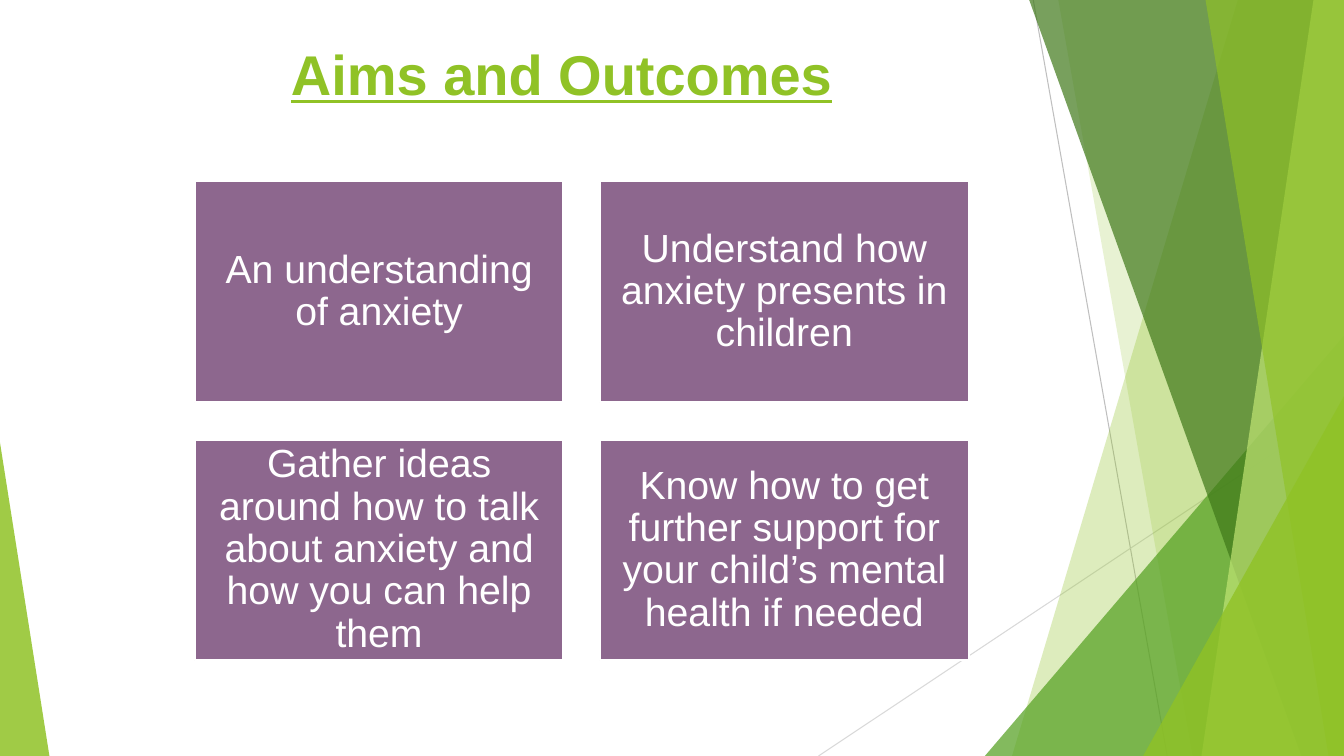
from dataclasses import dataclass

from lxml.etree import SubElement
from pptx import Presentation
from pptx.dml.color import RGBColor
from pptx.enum.shapes import MSO_CONNECTOR, MSO_SHAPE
from pptx.enum.text import MSO_ANCHOR, MSO_AUTO_SIZE, PP_ALIGN
from pptx.oxml.ns import qn
from pptx.shapes.autoshape import Shape
from pptx.slide import Slide
from pptx.text.text import _Run
from pptx.util import Emu, Inches, Pt

SLIDE_WIDTH = Inches(13.333)
SLIDE_HEIGHT = Inches(7.5)


@dataclass(frozen=True)
class Theme:
    font: str = "Arial"
    title_size: int = 40
    card_size: int = 28
    lime: str = "90C226"
    pale_lime: str = "C0E474"
    green: str = "54A021"
    dark_green: str = "3F7819"
    purple: str = "8D678E"
    white: str = "FFFFFF"
    gray: str = "BFBFBF"
    light_gray: str = "D9D9D9"


THEME = Theme()


# Positions are percentages of the slide's width (x) and height (y).
@dataclass(frozen=True)
class Ray:
    start: tuple[float, float]
    end: tuple[float, float]
    color: str


@dataclass(frozen=True)
class Band:
    """Full-height area from a slanted left edge to the right slide edge."""
    top_x: float
    bottom_x: float
    color: str
    opacity: int


@dataclass(frozen=True)
class Wedge:
    """Right triangle standing on the bottom slide edge."""
    left: float
    top: float
    width: float
    apex: float
    color: str
    opacity: int


@dataclass(frozen=True)
class CardGrid:
    left: float = 14.48
    top: float = 24
    width: float = 27.45
    height: float = 29.2
    column_gap: float = 2.7
    row_gap: float = 4.93
    columns: int = 2


RAYS = [
    Ray((76.88, 0), (86.85, 100), THEME.gray),
    Ray((100, 53.73), (60.9, 100), THEME.light_gray),
]
FACETS = [
    Band(92.1, 75.3, THEME.lime, 30),
    Band(78.75, 88.73, THEME.lime, 20),
    Wedge(73.28, 44.4, 26.72, 1, THEME.green, 72),
    Band(76.58, 96.83, THEME.dark_green, 70),
    Band(97.73, 89.4, THEME.pale_lime, 70),
    Band(89.7, 98.85, THEME.lime, 65),
    Wedge(85.05, 52.4, 14.95, 1, THEME.lime, 80),
    Wedge(0, 58.53, 3.68, 0, THEME.lime, 85),
]
AIMS = [
    "An understanding of anxiety",
    "Understand how anxiety presents in children",
    "Gather ideas around how to talk about anxiety and how you can help them",
    "Know how to get further support for your child’s mental health if needed",
]


def across(percent: float) -> Emu:
    return Emu(round(SLIDE_WIDTH * percent / 100))


def down(percent: float) -> Emu:
    return Emu(round(SLIDE_HEIGHT * percent / 100))


def paint(shape: Shape, color: str, opacity: int = 100) -> None:
    shape.shadow.inherit = False
    shape.fill.solid()
    shape.fill.fore_color.rgb = RGBColor.from_string(color)
    shape.line.fill.background()
    if opacity < 100:
        color_element = shape.fill._xPr.find(qn("a:solidFill"))[0]
        SubElement(color_element, qn("a:alpha"), val=str(opacity * 1000))


def style_run(run: _Run, size: int, color: str) -> None:
    run.font.name = THEME.font
    run.font.size = Pt(size)
    run.font.color.rgb = RGBColor.from_string(color)


def draw_ray(slide: Slide, ray: Ray) -> None:
    connector = slide.shapes.add_connector(
        MSO_CONNECTOR.STRAIGHT,
        across(ray.start[0]), down(ray.start[1]),
        across(ray.end[0]), down(ray.end[1]),
    )
    connector.line.color.rgb = RGBColor.from_string(ray.color)
    connector.line.width = Pt(0.75)
    SubElement(connector._element.spPr, qn("a:effectLst"))


def draw_facet(slide: Slide, facet: Band | Wedge) -> None:
    if isinstance(facet, Band):
        builder = slide.shapes.build_freeform(across(facet.top_x), 0)
        builder.add_line_segments([
            (SLIDE_WIDTH, 0),
            (SLIDE_WIDTH, SLIDE_HEIGHT),
            (across(facet.bottom_x), SLIDE_HEIGHT),
        ], close=True)
        shape = builder.convert_to_shape()
    else:
        shape = slide.shapes.add_shape(
            MSO_SHAPE.ISOSCELES_TRIANGLE,
            across(facet.left), down(facet.top),
            across(facet.width), down(100 - facet.top),
        )
        shape.adjustments[0] = facet.apex
    paint(shape, facet.color, facet.opacity)


def write_title(slide: Slide, text: str) -> None:
    title = slide.shapes.title
    title.left, title.top = across(-1.35), down(4.53)
    title.width, title.height = across(86.25), down(19.33)
    frame = title.text_frame
    frame.auto_size = MSO_AUTO_SIZE.NONE
    frame.vertical_anchor = MSO_ANCHOR.TOP
    paragraph = frame.paragraphs[0]
    paragraph.alignment = PP_ALIGN.CENTER
    run = paragraph.add_run()
    run.text = text
    style_run(run, THEME.title_size, THEME.lime)
    run.font.bold = True
    run.font.underline = True


def draw_card(slide: Slide, grid: CardGrid, index: int, text: str) -> None:
    row, column = divmod(index, grid.columns)
    card = slide.shapes.add_shape(
        MSO_SHAPE.RECTANGLE,
        across(grid.left + column * (grid.width + grid.column_gap)),
        down(grid.top + row * (grid.height + grid.row_gap)),
        across(grid.width), down(grid.height),
    )
    paint(card, THEME.purple)
    card.line.color.rgb = RGBColor.from_string(THEME.white)
    card.line.width = Pt(1.5)
    frame = card.text_frame
    frame.word_wrap = True
    frame.vertical_anchor = MSO_ANCHOR.MIDDLE
    frame.margin_left = frame.margin_right = Inches(0.12)
    frame.margin_top = frame.margin_bottom = Inches(0.12)
    paragraph = frame.paragraphs[0]
    paragraph.alignment = PP_ALIGN.CENTER
    paragraph.line_spacing = 0.9
    run = paragraph.add_run()
    run.text = text
    style_run(run, THEME.card_size, THEME.white)


def main() -> None:
    presentation = Presentation()
    presentation.slide_width = SLIDE_WIDTH
    presentation.slide_height = SLIDE_HEIGHT
    slide = presentation.slides.add_slide(presentation.slide_layouts[5])

    # Decorative backdrop
    for ray in RAYS:
        draw_ray(slide, ray)
    for facet in FACETS:
        draw_facet(slide, facet)

    # Title and aims
    write_title(slide, "Aims and Outcomes")
    for index, aim in enumerate(AIMS):
        draw_card(slide, CardGrid(), index, aim)

    presentation.save("out.pptx")


if __name__ == "__main__":
    main()
